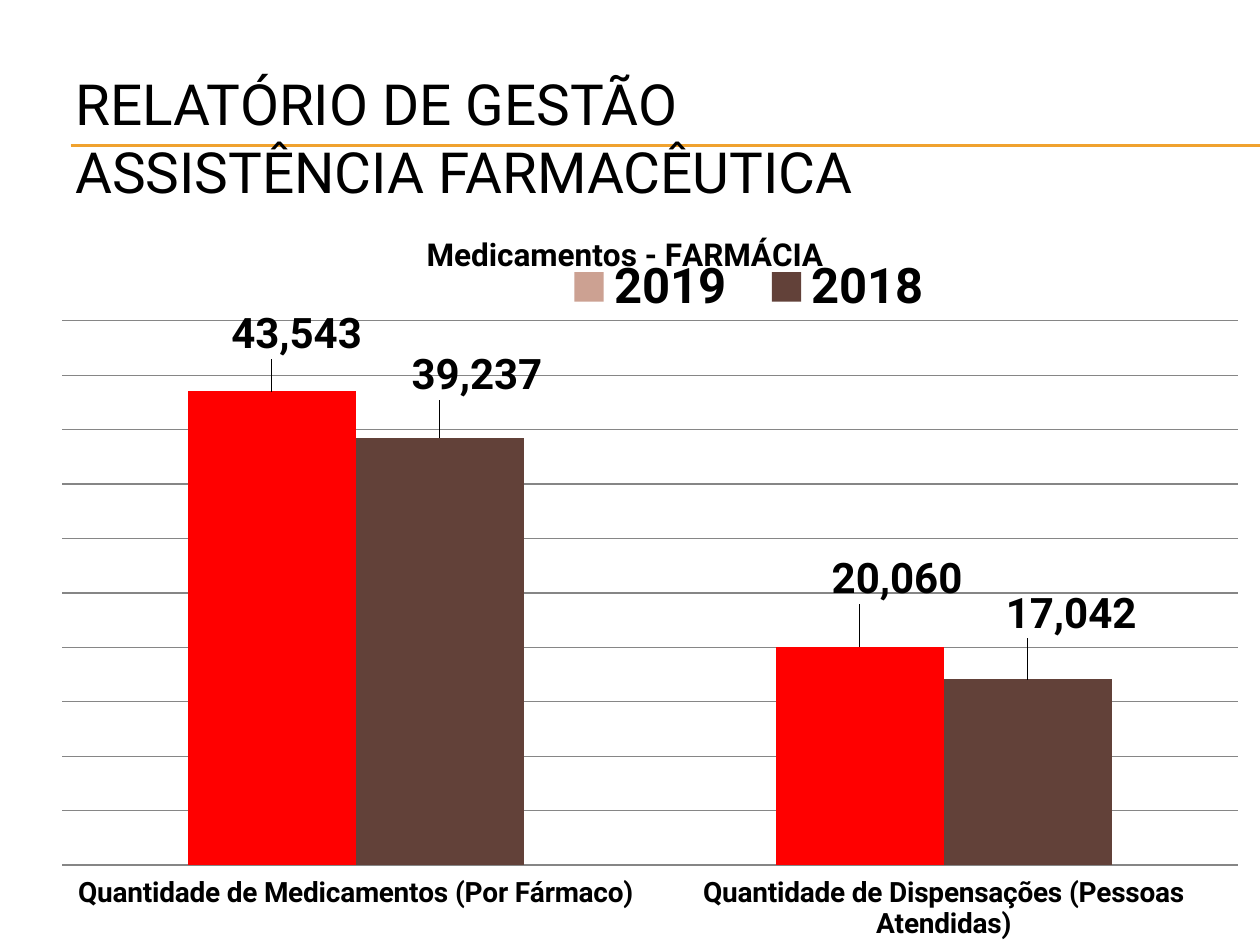
from lxml.etree import SubElement
from pptx import Presentation
from pptx.chart.data import CategoryChartData
from pptx.dml.color import RGBColor
from pptx.enum.chart import (XL_CHART_TYPE, XL_LABEL_POSITION, XL_LEGEND_POSITION,
                             XL_TICK_LABEL_POSITION, XL_TICK_MARK)
from pptx.enum.shapes import MSO_CONNECTOR
from pptx.enum.text import MSO_ANCHOR
from pptx.oxml import parse_xml
from pptx.oxml.ns import nsdecls, qn
from pptx.util import Inches, Pt

BLACK = RGBColor(0, 0, 0)
GOLD = RGBColor(0xF0, 0xA2, 0x2E)
GRAY = RGBColor(0x86, 0x86, 0x86)
RED = RGBColor(0xFF, 0, 0)
ROSE = RGBColor(0xCC, 0xA1, 0x92)
BROWN = RGBColor(0x62, 0x41, 0x39)
FACE = "Roboto"
COUNT = "#,##0"
GROUPS = ["Quantidade de Medicamentos (Por Fármaco)",
          "Quantidade de Dispensações (Pessoas Atendidas)"]
YEARS = [("2019", (43543, 20060), ROSE, RED, ((0.02, -0.035), (0.03, -0.048))),
         ("2018", (39237, 17042), BROWN, BROWN, ((0.03, -0.042), (0.035, -0.046)))]


def dress(font, size, bold=False, color=BLACK):
    font.name, font.size, font.bold = FACE, Pt(size), bold
    font.color.rgb = color


def write(frame, text, **look):
    frame.text = text
    for run in frame.paragraphs[0].runs:
        dress(run.font, **look)


def place(prior, **spots):
    layout = parse_xml(f"<c:layout {nsdecls('c')}><c:manualLayout/></c:layout>")
    for tag, value in spots.items():
        SubElement(layout[0], qn(f"c:{tag}")).set("val", str(value))
    prior.addnext(layout)
    return layout


class Deck:
    """Draws styled elements on the current slide."""

    def __init__(self, slide, accent):
        self.slide, self.accent = slide, accent

    def rule(self, left, right, top):
        line = self.slide.shapes.add_connector(
            MSO_CONNECTOR.STRAIGHT, Inches(left), Inches(top), Inches(right), Inches(top))
        line.line.color.rgb, line.line.width = self.accent, Pt(0.75)
        SubElement(line.line._get_or_add_ln().getparent(), qn("a:effectLst"))

    def text(self, text, left, top, width, height, **look):
        box = self.slide.shapes.add_textbox(
            Inches(left), Inches(top), Inches(width), Inches(height))
        frame = box.text_frame
        frame.word_wrap, frame.vertical_anchor = True, MSO_ANCHOR.MIDDLE
        write(frame, text, **look)

    def chart(self, title, left, top, width, height):
        data = CategoryChartData(number_format=COUNT)
        data.categories = GROUPS
        for name, values, *_ in YEARS:
            data.add_series(name, values)
        chart = self.slide.shapes.add_chart(
            XL_CHART_TYPE.COLUMN_CLUSTERED, Inches(left), Inches(top),
            Inches(width), Inches(height), data).chart
        dress(chart.font, 10)
        self.heads(chart, title)
        self.axes(chart)
        self.bars(chart.plots[0])

    def heads(self, chart, title):
        chart.has_title = chart.has_legend = True
        write(chart.chart_title.text_frame, title, size=18, bold=True)
        root = chart._chartSpace
        for old in root.xpath("c:chart/c:title/c:layout | c:chart/c:plotArea/c:layout"):
            old.getparent().remove(old)
        place(root.xpath("c:chart/c:title/c:tx")[0],
              xMode="edge", yMode="edge", x=0.34, y=0.04)
        area = root.xpath("c:chart/c:plotArea")[0]
        area.insert(0, place(area[0], layoutTarget="inner", xMode="edge", yMode="edge",
                             x=0.05, y=0.16, w=0.95, h=0.7))
        key = chart.legend
        key.position, key.include_in_layout = XL_LEGEND_POSITION.TOP, False
        for old in root.xpath("c:chart/c:legend/c:layout"):
            old.getparent().remove(old)
        place(root.xpath("c:chart/c:legend/c:legendPos")[0],
              xMode="edge", yMode="edge", x=0.44, y=0.08, w=0.33, h=0.07)
        dress(key.font, 28, True)

    def axes(self, chart):
        base, scale = chart.category_axis, chart.value_axis
        base.tick_label_position = XL_TICK_LABEL_POSITION.LOW
        base.major_tick_mark = XL_TICK_MARK.NONE
        base.format.line.fill.background()
        dress(base.tick_labels.font, 16, True)
        scale.minimum_scale, scale.maximum_scale, scale.major_unit = 0, 50000, 5000
        scale.visible, scale.has_major_gridlines = False, True
        grid = scale.major_gridlines.format.line
        grid.color.rgb, grid.width = GRAY, Pt(0.75)

    def bars(self, plot):
        plot.gap_width, plot.overlap, plot.vary_by_categories = 150, 0, False
        for row, (_, _, tone, fill, shifts) in zip(plot.series, YEARS):
            row.format.fill.solid()
            row.format.fill.fore_color.rgb = tone
            for spot, (x, y) in enumerate(shifts):
                point = row.points[spot]
                if fill != tone:
                    point.format.fill.solid()
                    point.format.fill.fore_color.rgb = fill
                dress(point.data_label.font, 24, True)
                point.data_label.position = XL_LABEL_POSITION.OUTSIDE_END
                mark = row._element.xpath(f"c:dLbls/c:dLbl/c:idx[@val='{spot}']")[0]
                place(mark, x=x, y=y).addnext(parse_xml(
                    f'<c:numFmt {nsdecls("c")} formatCode="{COUNT}" sourceLinked="0"/>'))


def main():
    show = Presentation()
    show.slide_width, show.slide_height = Inches(10), Inches(7.5)
    deck = Deck(show.slides.add_slide(show.slide_layouts[6]), GOLD)
    for top in (1.15, 1.16):
        deck.rule(0.56, 10, top)
    deck.text("RELATÓRIO DE GESTÃO\vASSISTÊNCIA FARMACÊUTICA",
              0.5, 0.62, 9, 0.93, size=32.4)
    deck.chart("Medicamentos - FARMÁCIA", 0, 1.56, 9.83, 6.17)
    show.save("out.pptx")


if __name__ == "__main__":
    main()
